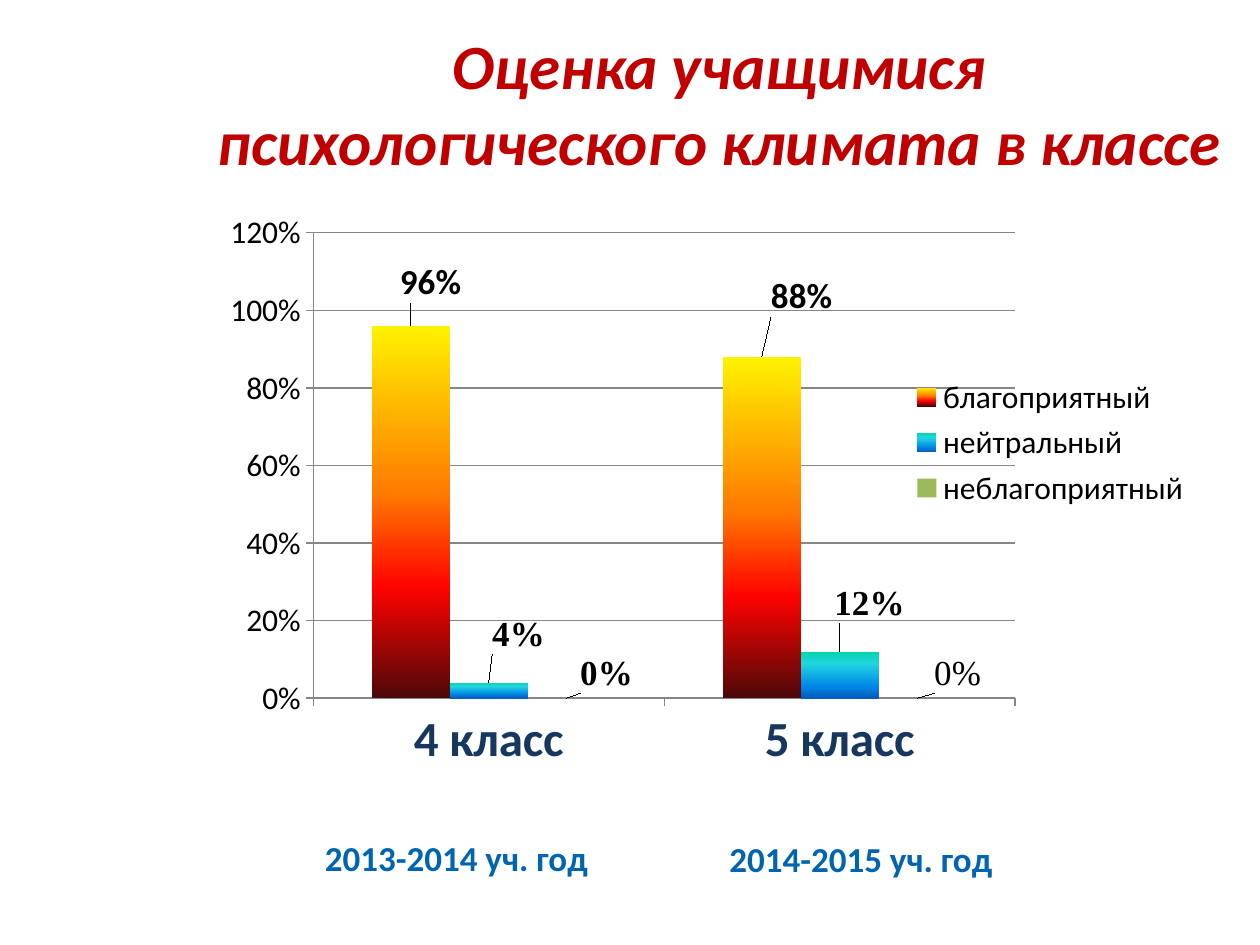
from dataclasses import dataclass

from lxml import etree
from pptx import Presentation
from pptx.chart.data import CategoryChartData
from pptx.dml.color import RGBColor
from pptx.enum.chart import XL_CHART_TYPE, XL_LABEL_POSITION, XL_LEGEND_POSITION, XL_TICK_MARK
from pptx.enum.text import MSO_ANCHOR, MSO_AUTO_SIZE, PP_ALIGN
from pptx.oxml.ns import qn
from pptx.util import Inches, Pt

COLUMNS = XL_CHART_TYPE.COLUMN_CLUSTERED
ABOVE_BAR = XL_LABEL_POSITION.OUTSIDE_END
LEGEND_RIGHT = XL_LEGEND_POSITION.RIGHT
TICK_OUT = XL_TICK_MARK.OUTSIDE
MIDDLE = MSO_ANCHOR.MIDDLE
CENTER = PP_ALIGN.CENTER
GROW = MSO_AUTO_SIZE.SHAPE_TO_FIT_TEXT
TITLE_ONLY = 5

WIDTH, HEIGHT = Inches(10), Inches(7.5)
SANS, SERIF = "Calibri", "Times New Roman"
BLACK, GRAY = "000000", "868686"


@dataclass
class Area:
    """A rectangle in percent of the slide's size."""
    left: float
    top: float
    width: float
    height: float

    def lengths(self) -> tuple:
        return (int(WIDTH * self.left / 100), int(HEIGHT * self.top / 100),
                int(WIDTH * self.width / 100), int(HEIGHT * self.height / 100))


@dataclass
class Label:
    """A value label, moved by shares of the chart's size."""
    shift_x: float
    shift_y: float
    bold: bool = True


@dataclass
class Climate:
    """One rating: its name, values, gradient stops and value labels."""
    name: str
    values: tuple
    stops: dict
    font: str
    labels: tuple


@dataclass
class YearNote:
    text: str
    area: Area


CLASSES = ("4 класс", "5 класс")
CLIMATES = (
    Climate("благоприятный", (0.96, 0.88),
            {0: "FFF200", 45: "FF7A00", 70: "FF0300", 100: "4D0808"}, SANS,
            (Label(0.02, -0.03), Label(0.04, -0.06))),
    Climate("нейтральный", (0.04, 0.12),
            {0: "03D4A8", 25: "21D6E0", 75: "0087E6", 100: "005CBF"}, SERIF,
            (Label(0.03, -0.04), Label(0.03, -0.04))),
    Climate("неблагоприятный", (0, 0), {0: "9BBB59"}, SERIF,
            (Label(0.04, 0), Label(0.04, 0, bold=False))),
)
YEARS = (
    YearNote("2013-2014 уч. год", Area(24.8, 87.9, 23.2, 5.9)),
    YearNote("2014-2015 уч. год", Area(56.9, 88, 23.2, 5.9)),
)
TITLE_AREA = Area(13.6, 8, 87, 13.6)
CHART_AREA = Area(16.1, 21.6, 79.6, 60.8)
PLOT_LAYOUT = {"layoutTarget": "inner", "xMode": "edge", "yMode": "edge",
               "x": 0.11, "y": 0.05, "w": 0.7, "h": 0.81}
LEGEND_LAYOUT = {"xMode": "edge", "yMode": "edge",
                 "x": 0.7, "y": 0.29, "w": 0.29, "h": 0.25}


def color(value: str) -> RGBColor:
    return RGBColor.from_string(value)


def set_font(font, tint: str = BLACK, **values) -> None:
    for name, value in values.items():
        setattr(font, name, value)
    font.color.rgb = color(tint)


def set_layout(parent, index: int, values: dict) -> None:
    """Give a chart part a manual layout as its child number index."""
    for old in parent.findall(qn("c:layout")):
        parent.remove(old)
    layout = etree.Element(qn("c:layout"))
    manual = etree.SubElement(layout, qn("c:manualLayout"))
    for name, value in values.items():
        etree.SubElement(manual, qn(f"c:{name}"), val=str(value))
    parent.insert(index, layout)


def fill_series(series, stops: dict) -> None:
    fill = series.format.fill
    if len(stops) == 1:
        fill.solid()
        fill.fore_color.rgb = color(stops[0])
        return
    fill.gradient()
    fill.gradient_angle = 270
    stop_list = series._element.find(".//" + qn("a:gsLst"))
    for old in list(stop_list):
        stop_list.remove(old)
    for percent, tint in stops.items():
        stop = etree.SubElement(stop_list, qn("a:gs"), pos=str(percent * 1000))
        etree.SubElement(stop, qn("a:srgbClr"), val=tint)


def label_series(series, climate: Climate) -> None:
    for index, place in enumerate(climate.labels):
        label = series.points[index].data_label
        set_font(label.font, name=climate.font, size=Pt(20), bold=place.bold)
        label.position = ABOVE_BAR
    for element, place in zip(series._element.iter(qn("c:dLbl")), climate.labels):
        set_layout(element, 1, {"x": place.shift_x, "y": place.shift_y})


def add_title(slide) -> None:
    title = slide.shapes.title
    title.left, title.top, title.width, title.height = TITLE_AREA.lengths()
    frame = title.text_frame
    frame.word_wrap = True
    frame.vertical_anchor = MIDDLE
    frame.margin_bottom = Inches(0.65)
    para = frame.paragraphs[0]
    para.text = "Оценка учащимися\vпсихологического климата в классе"
    para.alignment = CENTER
    for span in para.runs:
        set_font(span.font, "C00000", name=SANS, size=Pt(36), bold=True, italic=True)


def add_climate_chart(slide) -> None:
    data = CategoryChartData(number_format="0%")
    data.categories = CLASSES
    for climate in CLIMATES:
        data.add_series(climate.name, climate.values)
    chart = slide.shapes.add_chart(COLUMNS, *CHART_AREA.lengths(), data).chart
    set_font(chart.font, name=SANS, size=Pt(18))
    chart.has_title = False

    # Bars and their labels
    plot = chart.plots[0]
    plot.gap_width = 150
    plot.overlap = 0
    plot.vary_by_categories = False
    for series, climate in zip(plot.series, CLIMATES):
        fill_series(series, climate.stops)
        label_series(series, climate)

    # Axes
    values, classes = chart.value_axis, chart.category_axis
    values.minimum_scale, values.maximum_scale, values.major_unit = 0, 1.2, 0.2
    values.has_major_gridlines = True
    values.tick_labels.number_format = "0%"
    values.tick_labels.number_format_is_linked = False
    for axis in (values, classes):
        axis.major_tick_mark = TICK_OUT
    for line in (values.format.line, classes.format.line, values.major_gridlines.format.line):
        line.color.rgb = color(GRAY)
        line.width = Pt(0.75)
    set_font(classes.tick_labels.font, "17375E", name=SANS, size=Pt(28), bold=True)

    # Legend over the plot's right edge
    chart.has_legend = True
    chart.legend.position = LEGEND_RIGHT
    chart.legend.include_in_layout = False
    set_layout(chart.legend._element, 1, LEGEND_LAYOUT)
    set_layout(chart._chartSpace.find(".//" + qn("c:plotArea")), 0, PLOT_LAYOUT)


def add_year(slide, year: YearNote) -> None:
    frame = slide.shapes.add_textbox(*year.area.lengths()).text_frame
    frame.word_wrap = False
    frame.auto_size = GROW
    span = frame.paragraphs[0].add_run()
    span.text = year.text
    set_font(span.font, "0065B0", name=SANS, size=Pt(20), bold=True)


def main() -> None:
    deck = Presentation()
    deck.slide_width, deck.slide_height = WIDTH, HEIGHT
    slide = deck.slides.add_slide(deck.slide_layouts[TITLE_ONLY])
    add_title(slide)
    add_climate_chart(slide)
    for year in YEARS:
        add_year(slide, year)
    deck.save("out.pptx")


if __name__ == "__main__":
    main()
